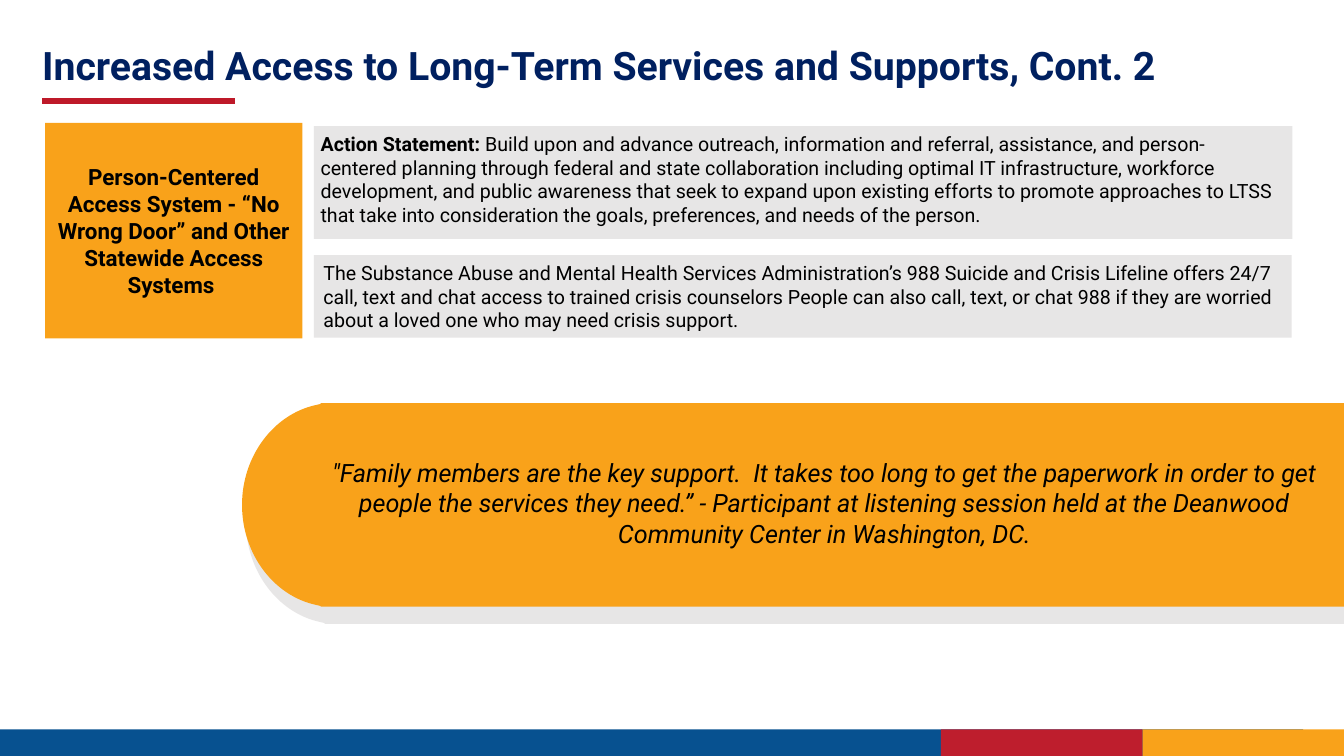
import pptx
import pptx.dml.color
import pptx.enum.shapes
import pptx.enum.text
import pptx.oxml
import pptx.util
from pptx.util import Cm

RGBColor = pptx.dml.color.RGBColor
PP_ALIGN = pptx.enum.text.PP_ALIGN
MSO_ANCHOR = pptx.enum.text.MSO_ANCHOR
MSO_AUTO_SIZE = pptx.enum.text.MSO_AUTO_SIZE

FONT = "Roboto"
BLACK = RGBColor(0x00, 0x00, 0x00)
NAVY = RGBColor(0x00, 0x20, 0x60)
BLUE = RGBColor(0x07, 0x51, 0x90)
RED = RGBColor(0xBE, 0x1E, 0x2D)
RULE_RED = RGBColor(0xBE, 0x19, 0x29)
GOLD = RGBColor(0xF9, 0xA2, 0x1A)
GREY = RGBColor(0xE7, 0xE6, 0xE6)

SLIDE_WIDTH, SLIDE_HEIGHT = 33.87, 19.05
FOOTER_TOP, FOOTER_HEIGHT = 18.38, 0.67

ACTION = (
    "Build upon and advance outreach, information and referral, assistance, "
    "and person-centered planning through federal and state collaboration "
    "including optimal IT infrastructure, workforce development, and public "
    "awareness that seek to expand upon existing efforts to promote approaches "
    "to LTSS that take into consideration the goals, preferences, and needs of "
    "the person."
)
LIFELINE = (
    "The Substance Abuse and Mental Health Services Administration’s 988 "
    "Suicide and Crisis Lifeline offers 24/7 call, text and chat access to "
    "trained crisis counselors People can also call, text, or chat 988 if they "
    "are worried about a loved one who may need crisis support."
)
QUOTE = (
    "\"Family members are the key support.  It takes too long to get the "
    "paperwork in order to get people the services they need.” - Participant at "
    "listening session held at the Deanwood Community Center in Washington, DC."
)


def add_span(para, text, size=14, color=BLACK, bold=False, italic=False):
    span = para.add_run()
    span.text = text
    font = span.font
    font.name, font.size = FONT, pptx.util.Pt(size)
    font.bold, font.italic = bold, italic
    font.color.rgb = color


def paint(shape, color):
    shape.fill.solid()
    shape.fill.fore_color.rgb = color
    shape.line.fill.background()
    shape.shadow.inherit = False
    return shape


def add_block(page, left, top, width, height, color):
    kind = pptx.enum.shapes.MSO_SHAPE.RECTANGLE
    return paint(page.shapes.add_shape(
        kind, Cm(left), Cm(top), Cm(width), Cm(height)), color)


def add_text(page, left, top, width, height, align=PP_ALIGN.LEFT):
    box = page.shapes.add_textbox(Cm(left), Cm(top), Cm(width), Cm(height))
    box.text_frame.word_wrap = True
    box.text_frame.auto_size = MSO_AUTO_SIZE.SHAPE_TO_FIT_TEXT
    para = box.text_frame.paragraphs[0]
    para.alignment = align
    return para


def curve_segments(shape, first):
    """Turn three straight segments, from number first on, into one curve."""
    qn = pptx.oxml.ns.qn
    segments = list(shape._element.iter(qn("a:lnTo")))[first:first + 3]
    curve = segments[0].makeelement(qn("a:cubicBezTo"), {})
    segments[0].addprevious(curve)
    for segment in segments:
        curve.append(segment[0])
        segment.getparent().remove(segment)


def add_rounded_band(page, left, top, color):
    """Band with a round left end made of two mirrored curves."""
    width, height, shoulder = 27.79, 5.13, 1.98
    lower_end = [
        (shoulder, height), (shoulder, 5.11), (1.85, 5.08),
        (0.81, 4.85), (0, 3.81),
    ]
    upper_end = [(x, height - y) for x, y in reversed(lower_end)]
    outline = [(width, 0), (width, height), *lower_end, (0, height / 2), *upper_end]
    points = [(Cm(left + x), Cm(top + y)) for x, y in outline]
    builder = page.shapes.build_freeform(*points[0])
    builder.add_line_segments(points[1:], close=True)
    band = paint(builder.convert_to_shape(), color)
    for first in (7, 4):
        curve_segments(band, first)


def add_rule(page, left, right, y):
    rule = page.shapes.add_connector(
        pptx.enum.shapes.MSO_CONNECTOR.STRAIGHT, Cm(left), Cm(y), Cm(right), Cm(y))
    rule.line.color.rgb = RULE_RED
    rule.line.width = pptx.util.Pt(4.5)
    properties = rule._element.spPr
    properties.append(properties.makeelement(pptx.oxml.ns.qn("a:effectLst"), {}))


def set_title(page, text):
    title = page.shapes.title
    title.left, title.top = Cm(0.81), Cm(0.53)
    title.width, title.height = Cm(30.48), Cm(2.34)
    frame = title.text_frame
    frame.auto_size = MSO_AUTO_SIZE.NONE
    frame.vertical_anchor = MSO_ANCHOR.MIDDLE
    para = frame.paragraphs[0]
    para.alignment, para.line_spacing = PP_ALIGN.LEFT, 0.9
    add_span(para, text, size=28, color=NAVY, bold=True)


def main():
    deck = pptx.Presentation()
    deck.slide_width, deck.slide_height = Cm(SLIDE_WIDTH), Cm(SLIDE_HEIGHT)
    page = deck.slides.add_slide(deck.slide_layouts[5])

    # Footer stripe
    for left, width, color in ((0, 32.84, BLUE), (28.79, 5.08, GOLD), (23.71, 5.08, RED)):
        add_block(page, left, FOOTER_TOP, width, FOOTER_HEIGHT, color)

    # Quote band over its grey echo
    add_rounded_band(page, 6.2, 10.59, GREY)
    add_rounded_band(page, 6.1, 10.16, GOLD)

    # Title and rule
    set_title(page, "Increased Access to Long-Term Services and Supports, Cont. 2")
    add_rule(page, 1.07, 5.92, 2.54)

    # Topic block
    topic = add_block(page, 1.14, 3.1, 6.48, 5.43, GOLD)
    topic.text_frame.word_wrap = True
    topic.text_frame.vertical_anchor = MSO_ANCHOR.MIDDLE
    para = topic.text_frame.paragraphs[0]
    para.alignment = PP_ALIGN.CENTER
    add_span(para, "Person-Centered Access System - “No Wrong Door” and Other "
             "Statewide Access Systems ", size=16, bold=True)

    # Action statement
    add_block(page, 7.91, 3.18, 24.66, 2.84, GREY)
    para = add_text(page, 7.83, 3.2, 24.51, 2.64)
    add_span(para, "Action Statement: ", bold=True)
    add_span(para, ACTION)

    # Crisis lifeline
    add_block(page, 7.91, 6.43, 24.64, 2.08, GREY)
    add_span(add_text(page, 7.9, 6.45, 24.5, 2.06), LIFELINE)

    # Quote
    para = add_text(page, 7.9, 11.4, 25.76, 2.57, align=PP_ALIGN.CENTER)
    add_span(para, QUOTE, size=18, italic=True)

    deck.save("out.pptx")


if __name__ == "__main__":
    main()
